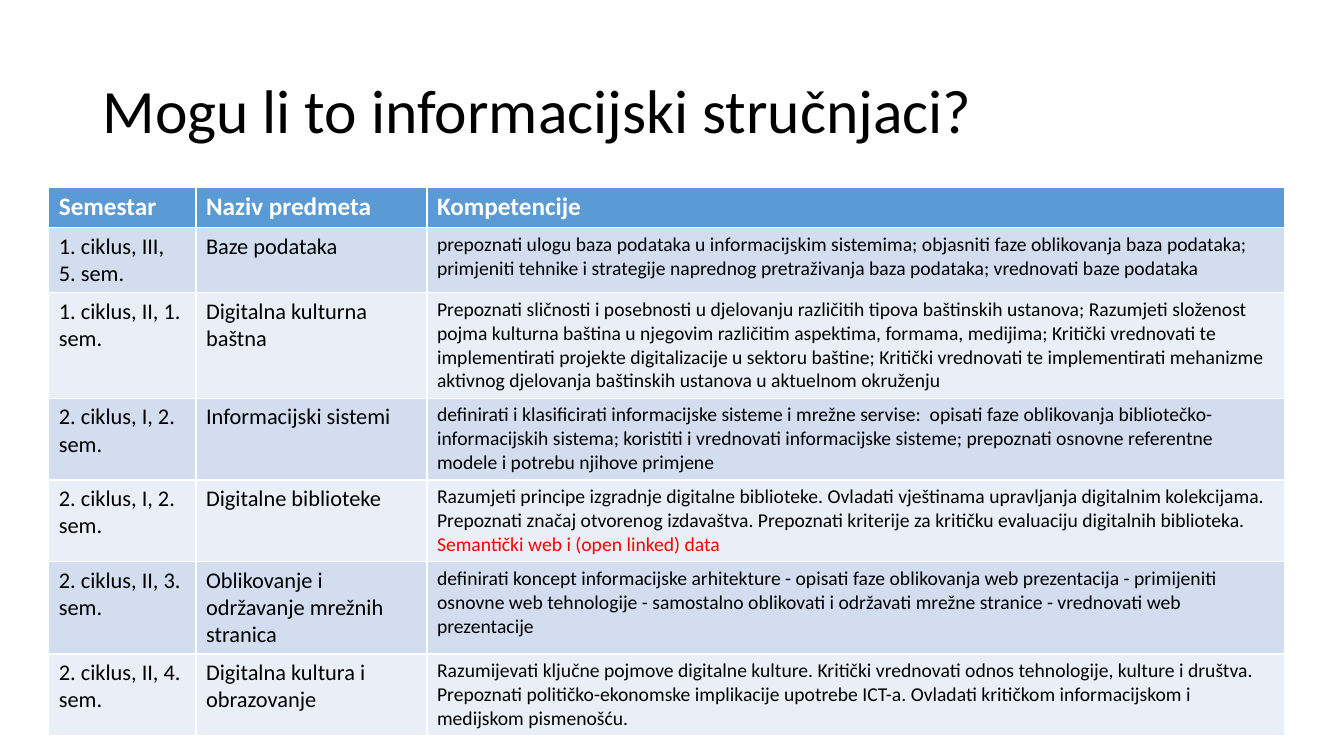
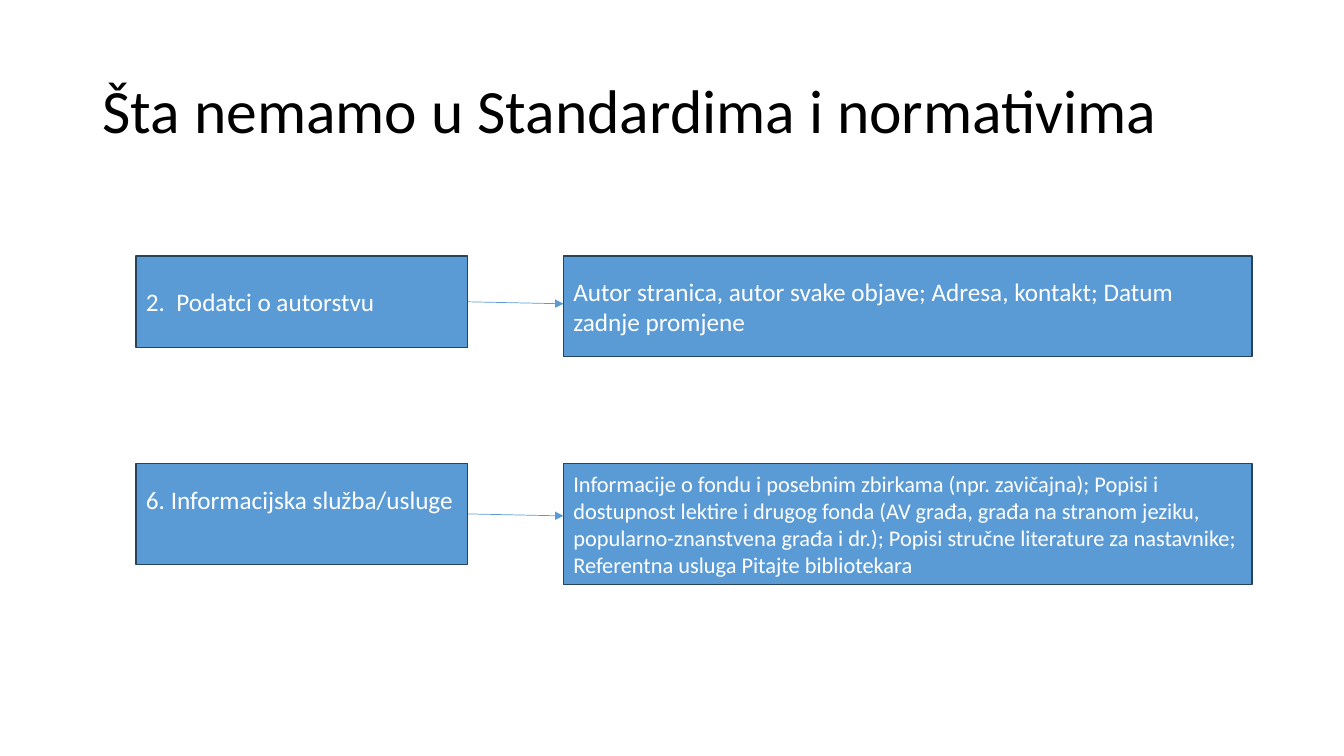
from lxml.etree import SubElement
from pptx import Presentation
from pptx.dml.color import RGBColor
from pptx.enum.shapes import MSO_CONNECTOR, MSO_SHAPE
from pptx.enum.text import MSO_ANCHOR, MSO_AUTO_SIZE, PP_ALIGN
from pptx.oxml.ns import qn
from pptx.util import Cm, Pt


def color(code):
    return RGBColor.from_string(code)


class Deck:
    """Shared style and the current slide; lengths are centimetres."""
    font = "Calibri"
    blue, edge = "5B9BD5", "28445D"
    black, white, red = "000000", "FFFFFF", "FF0000"
    bands = ("D2DEEF", "EAEFF7")

    def __init__(self):
        self.show = Presentation()
        self.show.slide_width = Cm(33.87)
        self.show.slide_height = Cm(19.05)
        self.slide = None

    def label(self, para, text, size, tone, bold=False):
        """Add one run."""
        run = para.add_run()
        run.text = text
        run.font.name = self.font
        run.font.size = Pt(size)
        run.font.bold = bold
        run.font.color.rgb = color(tone)

    def start(self, text):
        """New slide with its title."""
        self.slide = self.show.slides.add_slide(self.show.slide_layouts[5])
        title = self.slide.shapes.title
        title.left, title.top = Cm(2.33), Cm(1.01)
        title.width, title.height = Cm(29.21), Cm(3.68)
        frame = title.text_frame
        frame.auto_size = MSO_AUTO_SIZE.NONE
        frame.word_wrap = True
        frame.vertical_anchor = MSO_ANCHOR.MIDDLE
        para = frame.paragraphs[0]
        para.alignment = PP_ALIGN.LEFT
        para.line_spacing = 0.9
        self.label(para, text, 44, self.black)

    def table(self, left, top, widths, heights, head, rows):
        """Banded table; each cell is a list of (text, colour) runs."""
        grid = self.slide.shapes.add_table(
            len(heights), len(widths), Cm(left), Cm(top),
            Cm(sum(widths)), Cm(sum(heights))).table
        for col, width in zip(grid.columns, widths):
            col.width = Cm(width)
        for row, height in zip(grid.rows, heights):
            row.height = Cm(height)
        for c, text in enumerate(head):
            self.cell(grid.cell(0, c), [(text, self.white)], 18, self.blue, True)
        for r, row in enumerate(rows):
            for c, (runs, size) in enumerate(zip(row, (16, 16, 14))):
                self.cell(grid.cell(r + 1, c), runs, size, self.bands[r % 2])

    def cell(self, cell, runs, size, fill, bold=False):
        cell.fill.solid()
        cell.fill.fore_color.rgb = color(fill)
        for text, tone in runs:
            self.label(cell.text_frame.paragraphs[0], text, size, tone, bold)

    def box(self, left, top, width, height, text, size=18, lift=0):
        """Blue box; lift moves its text up by widening the bottom inset."""
        box = self.slide.shapes.add_shape(
            MSO_SHAPE.RECTANGLE, Cm(left), Cm(top), Cm(width), Cm(height))
        box.shadow.inherit = False
        box.fill.solid()
        box.fill.fore_color.rgb = color(self.blue)
        box.line.color.rgb = color(self.edge)
        box.line.width = Pt(1)
        frame = box.text_frame
        frame.word_wrap = True
        frame.vertical_anchor = MSO_ANCHOR.MIDDLE
        frame.margin_bottom = Cm(0.13 + lift)
        para = frame.paragraphs[0]
        para.alignment = PP_ALIGN.LEFT
        self.label(para, text, size, self.white)

    def arrow(self, left, top, right, low):
        """Thin arrow from (left, top) to (right, low)."""
        line = self.slide.shapes.add_connector(
            MSO_CONNECTOR.STRAIGHT, Cm(left), Cm(top), Cm(right), Cm(low))
        line.line.color.rgb = color(self.blue)
        line.line.width = Pt(0.5)
        props = line._element.spPr
        SubElement(props.find(qn("a:ln")), qn("a:tailEnd"), type="triangle")
        SubElement(props, qn("a:effectLst"))


HEAD = ("Semestar", "Naziv predmeta", "Kompetencije")
# Term, course, skills, and an optional remark in red
COURSES = [
    ("1. ciklus, III, 5. sem.", "Baze podataka",
     "prepoznati ulogu baza podataka u informacijskim sistemima; objasniti "
     "faze oblikovanja baza podataka; primjeniti tehnike i strategije "
     "naprednog pretraživanja baza podataka; vrednovati baze podataka"),
    ("1. ciklus, II, 1. sem.", "Digitalna kulturna baštna",
     "Prepoznati sličnosti i posebnosti u djelovanju različitih tipova "
     "baštinskih ustanova; Razumjeti složenost pojma kulturna baština u "
     "njegovim različitim aspektima, formama, medijima; Kritički vrednovati "
     "te implementirati projekte digitalizacije u sektoru baštine; Kritički "
     "vrednovati te implementirati mehanizme aktivnog djelovanja baštinskih "
     "ustanova u aktuelnom okruženju"),
    ("2. ciklus, I, 2. sem.", "Informacijski sistemi",
     "definirati i klasificirati informacijske sisteme i mrežne servise:  "
     "opisati faze oblikovanja bibliotečko-informacijskih sistema; koristiti "
     "i vrednovati informacijske sisteme; prepoznati osnovne referentne "
     "modele i potrebu njihove primjene"),
    ("2. ciklus, I, 2. sem.", "Digitalne biblioteke",
     "Razumjeti principe izgradnje digitalne biblioteke. Ovladati vještinama "
     "upravljanja digitalnim kolekcijama. Prepoznati značaj otvorenog "
     "izdavaštva. Prepoznati kriterije za kritičku evaluaciju digitalnih "
     "biblioteka. ",
     "Semantički web i (open linked) data"),
    ("2. ciklus, II, 3. sem.", "Oblikovanje i održavanje mrežnih stranica",
     "definirati koncept informacijske arhitekture - opisati faze oblikovanja "
     "web prezentacija - primijeniti osnovne web tehnologije - samostalno "
     "oblikovati i održavati mrežne stranice - vrednovati web prezentacije"),
    ("2. ciklus, II, 4. sem.", "Digitalna kultura i obrazovanje",
     "Razumijevati ključne pojmove digitalne kulture. Kritički vrednovati "
     "odnos tehnologije, kulture i društva. Prepoznati političko-ekonomske "
     "implikacije upotrebe ICT-a. Ovladati kritičkom informacijskom i "
     "medijskom pismenošću."),
]

# Top, then (height, text, size, lift) of the left and the right box
PAIRS = [
    (6.45, (2.31, "2.  Podatci o autorstvu", 18, 0),
     (2.54, "Autor stranica, autor svake objave; Adresa, kontakt; Datum "
            "zadnje promjene", 18, 0)),
    (11.68, (2.54, "6. Informacijska služba/usluge", 18, 0.7),
     (3.05, "Informacije o fondu i posebnim zbirkama (npr. zavičajna); Popisi "
            "i dostupnost lektire i drugog fonda (AV građa, građa na stranom "
            "jeziku, popularno-znanstvena građa i dr.); Popisi stručne "
            "literature za nastavnike; Referentna usluga Pitajte "
            "bibliotekara", 16, 0)),
]


def main():
    deck = Deck()

    # Courses and skills
    deck.start("Mogu li to informacijski stručnjaci?")
    rows = [[[(term, deck.black)], [(name, deck.black)],
             [(skills, deck.black)] + [(text, deck.red) for text in note]]
            for term, name, skills, *note in COURSES]
    deck.table(1.23, 4.71, (3.71, 5.82, 21.62),
               (1.03, 1.63, 2.66, 2.06, 2.06, 2.32, 2.06), HEAD, rows)

    # Missing items, each with its details
    deck.start("Šta nemamo u Standardima i normativima")
    left, width, right = 3.43, 8.36, 14.2
    for top, item, info in PAIRS:
        deck.box(left, top, width, *item)
        deck.box(right, top, 17.35, *info)
        mid = top + item[0] / 2
        deck.arrow(left + width, mid, right, mid + 0.05)

    deck.show.save("out.pptx")


if __name__ == "__main__":
    main()
